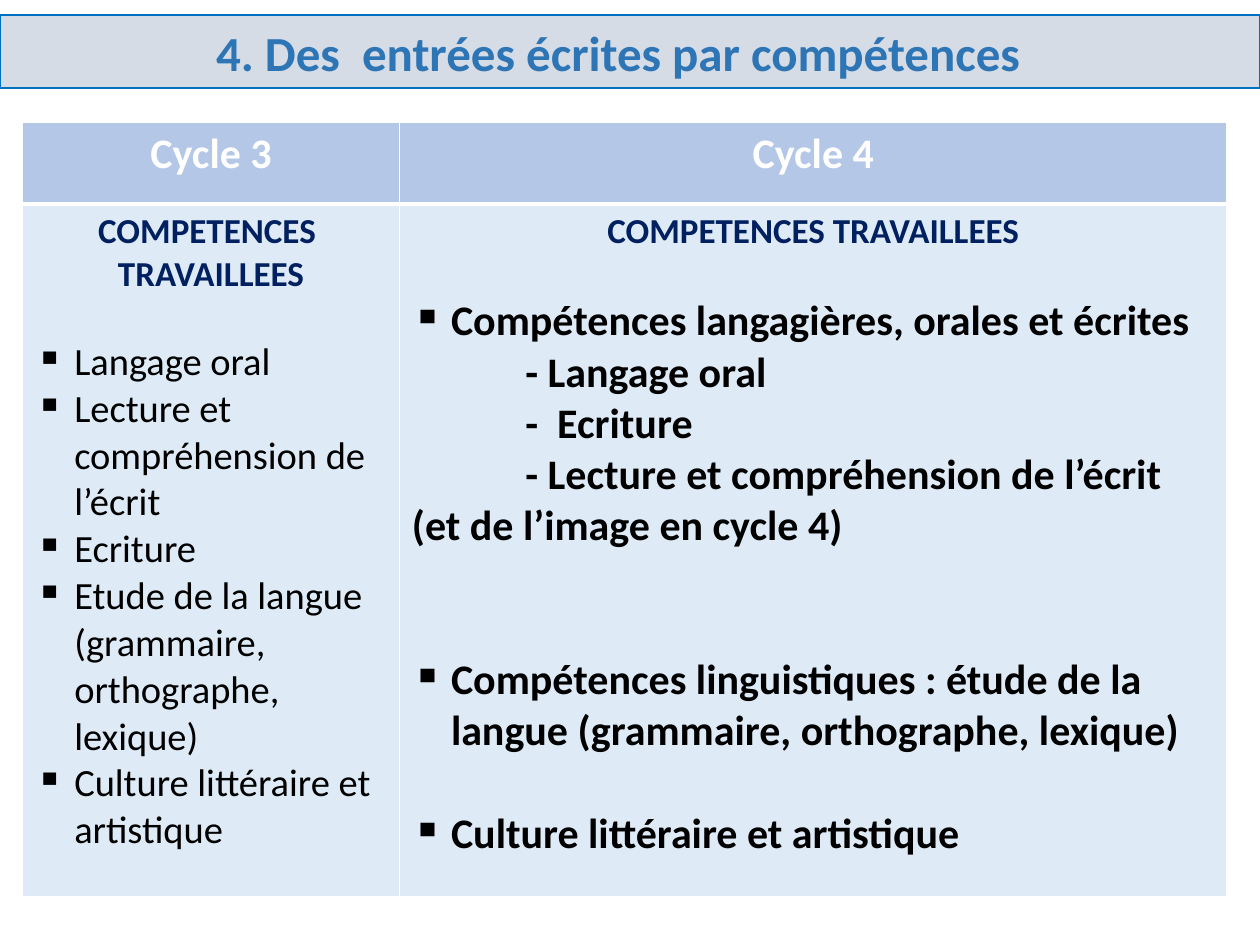
import pptx
import pptx.dml.color
import pptx.enum.text
import pptx.oxml
import pptx.oxml.ns
import pptx.util
from pptx.util import Inches

FONT = "Calibri"
WHITE, BLACK, NAVY = "FFFFFF", "000000", "002060"
HEADER_FILL, BODY_FILL = "B4C7E7", "DEEBF7"
HANG = 0.31
DASH_INDENT = 0.9
LINE_HEIGHT = 1.22

CYCLE_3 = [
    "Langage oral",
    "Lecture et compréhension de l’écrit",
    "Ecriture",
    "Etude de la langue (grammaire, orthographe, lexique)",
    "Culture littéraire et artistique",
]
# Text, whether it is a dash item, and the number of empty lines above it
CYCLE_4 = [
    ("Compétences langagières, orales et écrites", False, 0),
    ("- Langage oral", True, 0),
    ("-  Ecriture", True, 0),
    ("- Lecture et compréhension de l’écrit (et de l’image en cycle 4)", True, 0),
    ("Compétences linguistiques : étude de la langue "
     "(grammaire, orthographe, lexique)", False, 2),
    ("Culture littéraire et artistique", False, 1),
]


def rgb(color):
    return pptx.dml.color.RGBColor.from_string(color)


def paint(target, color):
    target.fill.solid()
    target.fill.fore_color.rgb = rgb(color)


def write(frame, text, size, color, bold=True, centred=False, bullet=False,
          first_indent=0, before=0, after=0):
    """Write into the frame's empty first paragraph, or add a paragraph."""
    paragraph = frame.paragraphs[0]
    if paragraph.runs:
        paragraph = frame.add_paragraph()
    align = pptx.enum.text.PP_ALIGN
    paragraph.alignment = align.CENTER if centred else align.LEFT
    paragraph.line_spacing = 1.0
    paragraph.space_before = pptx.util.Pt(before)
    paragraph.space_after = pptx.util.Pt(after)
    run = paragraph.add_run()
    run.text = text
    run.font.name = FONT
    run.font.size = pptx.util.Pt(size)
    run.font.bold = bold
    run.font.color.rgb = rgb(color)

    properties = paragraph._p.get_or_add_pPr()
    left, indent = (HANG, -HANG) if bullet else (0, first_indent)
    properties.set("marL", str(Inches(left)))
    properties.set("indent", str(Inches(indent)))
    mark = properties.makeelement(
        pptx.oxml.ns.qn("a:buChar" if bullet else "a:buNone"))
    if bullet:
        mark.set("char", "▪")
    properties.append(mark)


def set_borders(cell, **widths):
    """Draw white cell borders; widths in points are keyed L, R, T and B."""
    properties = cell._tc.get_or_add_tcPr()
    for side, width in widths.items():
        properties.append(pptx.oxml.parse_xml(
            f'<a:ln{side} {pptx.oxml.ns.nsdecls("a")} w="{pptx.util.Pt(width)}">'
            f'<a:solidFill><a:srgbClr val="{WHITE}"/></a:solidFill></a:ln{side}>'))


def add_title(slide):
    title = slide.shapes.title
    title.left, title.top = Inches(0), Inches(0.12)
    title.width, title.height = Inches(10), Inches(0.58)
    paint(title, "D6DCE5")
    title.line.color.rgb = rgb("0070C0")
    title.line.width = pptx.util.Pt(1)
    frame = title.text_frame
    frame.word_wrap = True
    frame.auto_size = pptx.enum.text.MSO_AUTO_SIZE.NONE
    frame.vertical_anchor = pptx.enum.text.MSO_ANCHOR.MIDDLE
    frame.margin_top = frame.margin_bottom = Inches(0.05)
    frame.margin_left, frame.margin_right = Inches(0.1), Inches(0.29)
    write(frame, "4. Des  entrées écrites par compétences", 28, "2E75B6",
          centred=True)


def add_cycles_table(slide):
    widths, heights = (2.99, 6.57), (0.65, 5.5)
    table = slide.shapes.add_table(
        2, 2, Inches(0.18), Inches(0.97),
        Inches(sum(widths)), Inches(sum(heights))).table
    for column, width in zip(table.columns, widths):
        column.width = Inches(width)
    for row, height in zip(table.rows, heights):
        row.height = Inches(height)

    for index, cycle in enumerate(("Cycle 3", "Cycle 4")):
        header, body = table.cell(0, index), table.cell(1, index)
        set_borders(header, L=1, R=1, T=1, B=3)
        set_borders(body, L=1, R=1, T=3, B=1)
        paint(header, HEADER_FILL)
        paint(body, BODY_FILL)
        write(header.text_frame, cycle, 24, WHITE, centred=True)
    return table


def fill_cycle_3(frame):
    write(frame, "COMPETENCES  TRAVAILLEES", 20, NAVY, centred=True,
          after=20 * LINE_HEIGHT)
    for skill in CYCLE_3:
        write(frame, skill, 22, BLACK, bold=False, bullet=True)


def fill_cycle_4(frame):
    write(frame, "COMPETENCES TRAVAILLEES", 20, NAVY, centred=True,
          after=20 * LINE_HEIGHT)
    for skill, is_dash, gap_lines in CYCLE_4:
        write(frame, skill, 24, BLACK, bullet=not is_dash,
              first_indent=DASH_INDENT, before=gap_lines * 24 * LINE_HEIGHT)


def main():
    presentation = pptx.Presentation()
    presentation.slide_width = Inches(10)
    presentation.slide_height = Inches(7.5)
    slide = presentation.slides.add_slide(presentation.slide_layouts[5])
    add_title(slide)
    cycles = add_cycles_table(slide)
    fill_cycle_3(cycles.cell(1, 0).text_frame)
    fill_cycle_4(cycles.cell(1, 1).text_frame)
    presentation.save("out.pptx")


if __name__ == "__main__":
    main()
